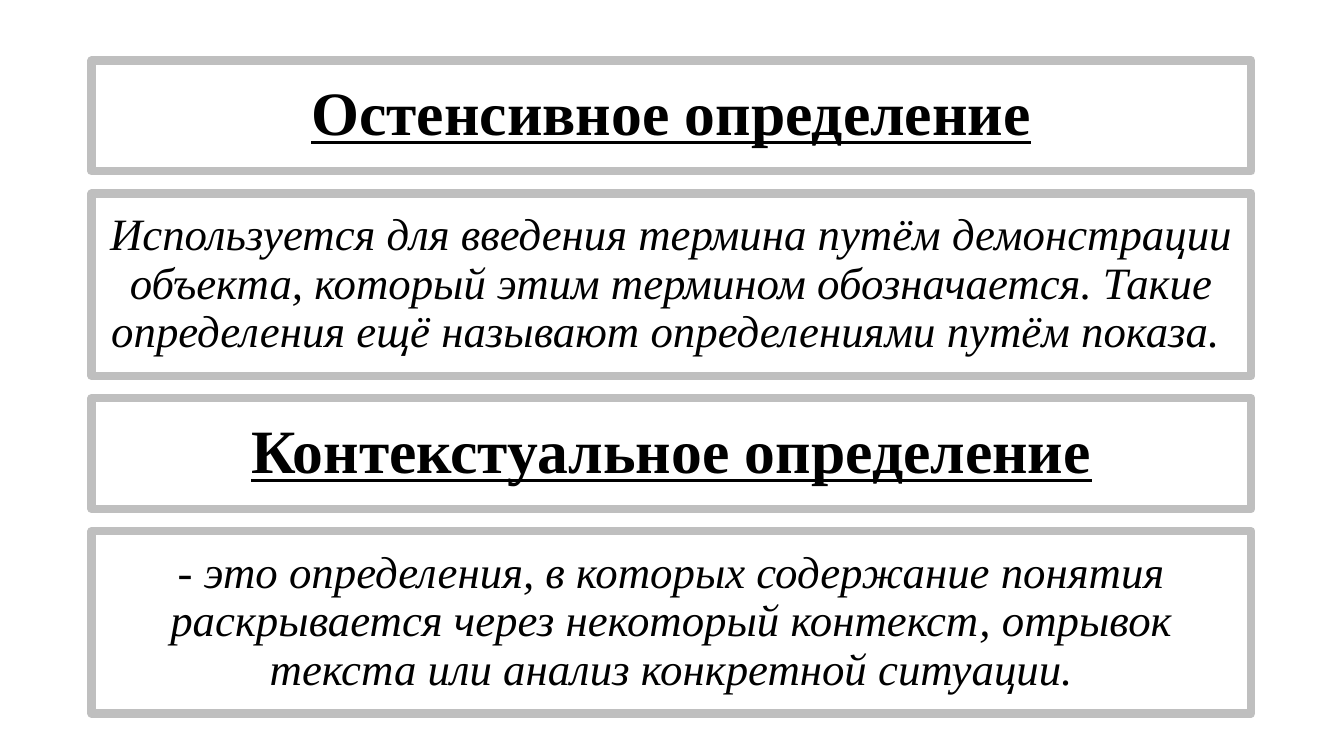
from dataclasses import dataclass

from pptx import Presentation
from pptx.dml.color import RGBColor
from pptx.enum.shapes import MSO_SHAPE
from pptx.enum.text import MSO_ANCHOR, PP_ALIGN
from pptx.util import Inches, Pt


@dataclass(frozen=True)
class Theme:
    """Colours, font and sizes of the slide."""
    font: str = "Times New Roman"
    text: RGBColor = RGBColor(0x00, 0x00, 0x00)
    fill: RGBColor = RGBColor(0xFF, 0xFF, 0xFF)
    border: RGBColor = RGBColor(0xBF, 0xBF, 0xBF)
    border_width: int = 6
    term_size: int = 44
    definition_size: int = 32


THEME = Theme()
LEFT, TOP, WIDTH, GAP = 0.91, 0.6, 11.5, 0.22
TERM_HEIGHT, DEFINITION_HEIGHT = 1.1, 1.81

DEFINITIONS = [
    ("Остенсивное определение",
     "Используется для введения термина путём демонстрации объекта, "
     "который этим термином обозначается. Такие определения ещё называют "
     "определениями путём показа. "),
    ("Контекстуальное определение",
     "- это определения, в которых содержание понятия раскрывается через "
     "некоторый контекст, отрывок текста или анализ конкретной ситуации."),
]


def add_box(slide, text, top, height, size):
    """Add a bordered box with centred text and return its font."""
    shape = slide.shapes.add_shape(
        MSO_SHAPE.RECTANGLE, Inches(LEFT), Inches(top), Inches(WIDTH), Inches(height))
    shape.shadow.inherit = False
    shape.fill.solid()
    shape.fill.fore_color.rgb = THEME.fill
    shape.line.color.rgb = THEME.border
    shape.line.width = Pt(THEME.border_width)
    frame = shape.text_frame
    frame.word_wrap = True
    frame.vertical_anchor = MSO_ANCHOR.MIDDLE
    frame.text = text
    paragraph = frame.paragraphs[0]
    paragraph.alignment = PP_ALIGN.CENTER
    paragraph.line_spacing = 0.9
    font = paragraph.runs[0].font
    font.name = THEME.font
    font.size = Pt(size)
    font.color.rgb = THEME.text
    return font


def add_term(slide, text, top):
    """Add the bold underlined heading box of a term."""
    font = add_box(slide, text, top, TERM_HEIGHT, THEME.term_size)
    font.bold = True
    font.underline = True


def add_definition(slide, text, top):
    """Add the italic box that explains a term."""
    font = add_box(slide, text, top, DEFINITION_HEIGHT, THEME.definition_size)
    font.italic = True


def main():
    """Build the slide and save it."""
    presentation = Presentation()
    presentation.slide_width = Inches(13.33)
    presentation.slide_height = Inches(7.5)
    slide = presentation.slides.add_slide(presentation.slide_layouts[6])
    top = TOP
    for term, definition in DEFINITIONS:
        add_term(slide, term, top)
        top += TERM_HEIGHT + GAP
        add_definition(slide, definition, top)
        top += DEFINITION_HEIGHT + GAP
    presentation.save("out.pptx")


if __name__ == "__main__":
    main()
